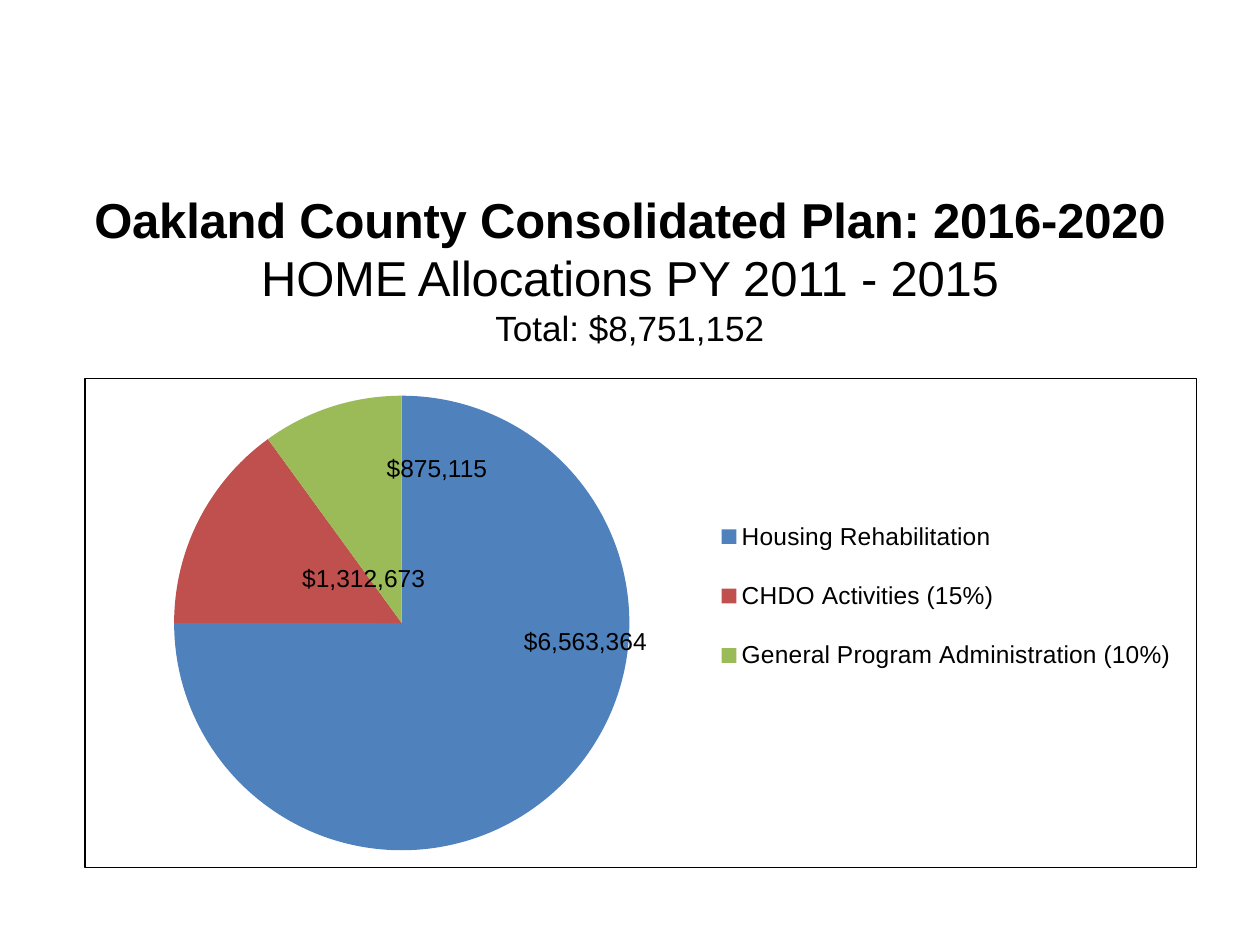
from dataclasses import dataclass

from lxml import etree
from pptx import Presentation
from pptx.chart.data import CategoryChartData
from pptx.dml.color import RGBColor
from pptx.enum.chart import XL_CHART_TYPE, XL_LEGEND_POSITION
from pptx.enum.text import MSO_ANCHOR, MSO_AUTO_SIZE, PP_ALIGN
from pptx.oxml import parse_xml
from pptx.oxml.ns import nsdecls, qn
from pptx.util import Inches, Pt

PIE = XL_CHART_TYPE.PIE
LEGEND_RIGHT = XL_LEGEND_POSITION.RIGHT
TOP = MSO_ANCHOR.TOP
FIT_SHAPE = MSO_AUTO_SIZE.SHAPE_TO_FIT_TEXT
CENTER = PP_ALIGN.CENTER


@dataclass(frozen=True)
class Theme:
    font: str = "Arial"
    chart_font: str = "Calibri"
    ink: RGBColor = RGBColor(0, 0, 0)
    heading: Pt = Pt(28)
    total: Pt = Pt(20)
    label: Pt = Pt(14)
    chart: Pt = Pt(10)


@dataclass(frozen=True)
class TitleLine:
    text: str
    size: Pt
    bold: bool
    spacing: int


@dataclass(frozen=True)
class Allocation:
    name: str
    percent: int
    color: str
    amount: str
    left: float
    top: float
    width: float
    wrap: bool


@dataclass(frozen=True)
class Layout:
    x: float
    y: float
    w: float
    h: float


THEME = Theme()
TITLE_LINES = (
    TitleLine("Oakland County Consolidated Plan: 2016-2020", THEME.heading, True, -10),
    TitleLine("HOME Allocations PY 2011 - 2015", THEME.heading, False, -10),
    TitleLine("Total: $8,751,152", THEME.total, False, 0),
)
ALLOCATIONS = (
    Allocation("Housing Rehabilitation", 75, "4F81BD", "$6,563,364", 4.06, 4.92, 1.18, False),
    Allocation("CHDO Activities (15%)", 15, "C0504D", "$1,312,673", 2.3, 4.42, 1.18, False),
    Allocation("General Program Administration (10%)", 10, "9BBB59", "$875,115", 2.97, 3.55, 1.08, True),
)
PLOT_LAYOUT = Layout(0.08, 0.035, 0.41, 0.93)
LEGEND_LAYOUT = Layout(0.56, 0.23, 0.43, 0.43)


def set_values(target, values: dict) -> None:
    for name, value in values.items():
        setattr(target, name, value)


def format_font(font, size: Pt, name: str = THEME.font, bold: bool = False) -> None:
    set_values(font, {"name": name, "size": size, "bold": bold})
    font.color.rgb = THEME.ink


def add_title(slide) -> None:
    title = slide.shapes.title
    set_values(title, {"left": Inches(0), "top": Inches(1.5),
                       "width": Inches(10), "height": Inches(1.28)})
    frame = title.text_frame
    set_values(frame, {"margin_left": 0, "margin_top": 0, "margin_right": 0,
                       "margin_bottom": 0, "word_wrap": True,
                       "vertical_anchor": TOP, "auto_size": FIT_SHAPE})
    for index, line in enumerate(TITLE_LINES):
        para = frame.add_paragraph() if index else frame.paragraphs[0]
        set_values(para, {"alignment": CENTER, "space_before": Pt(0), "line_spacing": 1.0})
        span = para.add_run()
        span.text = line.text
        format_font(span.font, line.size, bold=line.bold)
        span.font._element.set("spc", str(line.spacing))


def set_layout(parent, layout: Layout, inner: bool = False) -> None:
    for previous in parent.findall(qn("c:layout")):
        parent.remove(previous)
    element = parse_xml(f"<c:layout {nsdecls('c')}><c:manualLayout/></c:layout>")
    manual = element[0]
    settings = {"layoutTarget": "inner"} if inner else {}
    settings |= {"xMode": "edge", "yMode": "edge", "x": layout.x,
                 "y": layout.y, "w": layout.w, "h": layout.h}
    for tag, value in settings.items():
        etree.SubElement(manual, qn(f"c:{tag}")).set("val", str(value))
    position = 1 if parent.tag == qn("c:legend") else 0
    parent.insert(position, element)


def add_border(chart) -> None:
    border = parse_xml(
        f"<c:spPr {nsdecls('c', 'a')}><a:noFill/><a:ln w='{Pt(0.75)}'><a:solidFill>"
        f"<a:srgbClr val='{THEME.ink}'/></a:solidFill></a:ln></c:spPr>"
    )
    chart._chartSpace.find(qn("c:chart")).addnext(border)


def add_pie(slide) -> None:
    data = CategoryChartData()
    data.categories = [item.name for item in ALLOCATIONS]
    data.add_series("Series 1", [item.percent for item in ALLOCATIONS])
    chart = slide.shapes.add_chart(
        PIE, Inches(0.67), Inches(3), Inches(8.83), Inches(3.89), data
    ).chart
    set_values(chart, {"has_title": False, "has_legend": True})
    format_font(chart.font, THEME.chart, THEME.chart_font)
    set_values(chart.legend, {"position": LEGEND_RIGHT, "include_in_layout": False})
    format_font(chart.legend.font, THEME.label)
    plot = chart.plots[0]
    plot.vary_by_categories = True
    for index, item in enumerate(ALLOCATIONS):
        point = plot.series[0].points[index].format
        point.fill.solid()
        point.fill.fore_color.rgb = RGBColor.from_string(item.color)
        point.line.fill.background()
    set_layout(chart._chartSpace.chart.plotArea, PLOT_LAYOUT, inner=True)
    set_layout(chart.legend._element, LEGEND_LAYOUT)
    add_border(chart)


def add_amount(slide, item: Allocation) -> None:
    box = slide.shapes.add_textbox(
        Inches(item.left), Inches(item.top), Inches(item.width), Inches(0.34)
    )
    set_values(box.text_frame, {"word_wrap": item.wrap, "auto_size": FIT_SHAPE})
    span = box.text_frame.paragraphs[0].add_run()
    span.text = item.amount
    format_font(span.font, THEME.label)


def main() -> None:
    deck = Presentation()
    set_values(deck, {"slide_width": Inches(10), "slide_height": Inches(7.5)})
    page = deck.slides.add_slide(deck.slide_layouts[5])
    add_title(page)
    add_pie(page)
    for item in reversed(ALLOCATIONS):
        add_amount(page, item)
    deck.save("out.pptx")


if __name__ == "__main__":
    main()
